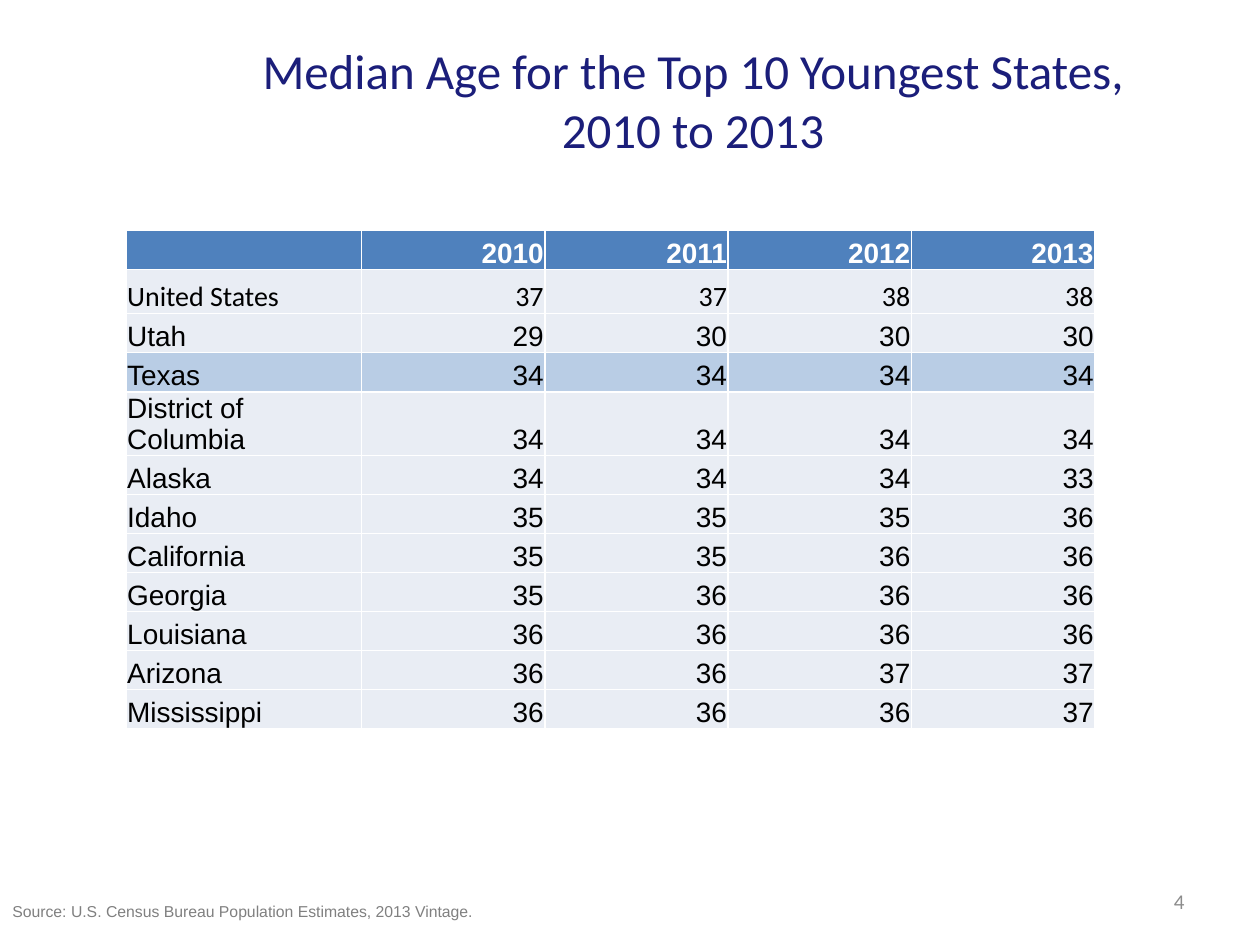
from pptx import Presentation
from pptx.dml.color import RGBColor
from pptx.enum.text import MSO_ANCHOR, MSO_AUTO_SIZE, PP_ALIGN
from pptx.util import Inches, Pt

YEARS = ["", "2010", "2011", "2012", "2013"]
AGES = [
    ("United States", 37, 37, 38, 38),
    ("Utah", 29, 30, 30, 30),
    ("Texas", 34, 34, 34, 34),
    ("District of Columbia", 34, 34, 34, 34),
    ("Alaska", 34, 34, 34, 33),
    ("Idaho", 35, 35, 35, 36),
    ("California", 35, 35, 36, 36),
    ("Georgia", 35, 36, 36, 36),
    ("Louisiana", 36, 36, 36, 36),
    ("Arizona", 36, 36, 37, 37),
    ("Mississippi", 36, 36, 36, 37),
]
HEIGHTS = {"United States": 0.35, "Alaska": 0.31, "District of Columbia": 0.29}


def color(code):
    return RGBColor.from_string(code)


def write(frame, text, size=16, font="Arial", ink="000000", bold=False,
          align=PP_ALIGN.LEFT, anchor=MSO_ANCHOR.TOP):
    frame.vertical_anchor = anchor
    line = frame.paragraphs[0]
    line.alignment = align
    run = line.add_run()
    run.text = text
    run.font.size = Pt(size)
    run.font.name = font
    run.font.bold = bold
    run.font.color.rgb = color(ink)


def place(shape, box):
    shape.left, shape.top, shape.width, shape.height = map(Inches, box)


def add_title(slide, box):
    title = slide.shapes.title
    place(title, box)
    title.text_frame.word_wrap = True
    write(title.text_frame, "Median Age for the Top 10 Youngest States, 2010 to 2013",
          size=28, font="Calibri", ink="1B1E7A",
          align=PP_ALIGN.CENTER, anchor=MSO_ANCHOR.MIDDLE)


def fill_cell(cell, text, fill, **look):
    cell.margin_left = cell.margin_right = cell.margin_top = Inches(0.01)
    cell.margin_bottom = 0
    cell.fill.solid()
    cell.fill.fore_color.rgb = color(fill)
    write(cell.text_frame, text, **look)
    cell.vertical_anchor = MSO_ANCHOR.BOTTOM


def add_ages(slide, box):
    rows = [YEARS, *AGES]
    table = slide.shapes.add_table(len(rows), len(YEARS), *map(Inches, box)).table
    table.horz_banding = False
    first = 1.87
    rest = (box[2] - first) / (len(YEARS) - 1)
    for i, column in enumerate(table.columns):
        column.width = Inches(rest if i else first)
    for r, row in enumerate(rows):
        name = row[0]
        table.rows[r].height = Inches(HEIGHTS.get(name, 0.31))
        head = r == 0
        fill = "4F81BD" if head else "B9CDE5" if name == "Texas" else "E9EDF4"
        for c, value in enumerate(row):
            fill_cell(table.cell(r, c), str(value), fill, bold=head,
                      font="Calibri" if name == "United States" else "Arial",
                      ink="FFFFFF" if head else "000000",
                      align=PP_ALIGN.RIGHT if c else PP_ALIGN.LEFT)


def add_number(slide, box):
    frame = slide.shapes.add_textbox(*map(Inches, box)).text_frame
    frame.word_wrap = True
    write(frame, "4", size=12, font="Calibri", ink="8C8C8C",
          align=PP_ALIGN.RIGHT, anchor=MSO_ANCHOR.MIDDLE)


def add_source(slide, box):
    frame = slide.shapes.add_textbox(*map(Inches, box)).text_frame
    frame.word_wrap = False
    frame.auto_size = MSO_AUTO_SIZE.SHAPE_TO_FIT_TEXT
    write(frame, "Source: U.S. Census Bureau Population Estimates, 2013 Vintage.",
          size=9, ink="808080")


def main():
    deck = Presentation()
    deck.slide_width, deck.slide_height = Inches(10), Inches(7.5)
    slide = deck.slides.add_slide(deck.slide_layouts.get_by_name("Title Only"))
    add_title(slide, (1.75, 0.25, 7.5, 1.08))
    add_ages(slide, (1, 1.83, 7.69, 3.78))
    add_number(slide, (7.17, 6.95, 2.33, 0.4))
    add_source(slide, (0, 7.11, 4, 0.25))
    deck.save("out.pptx")


if __name__ == "__main__":
    main()
